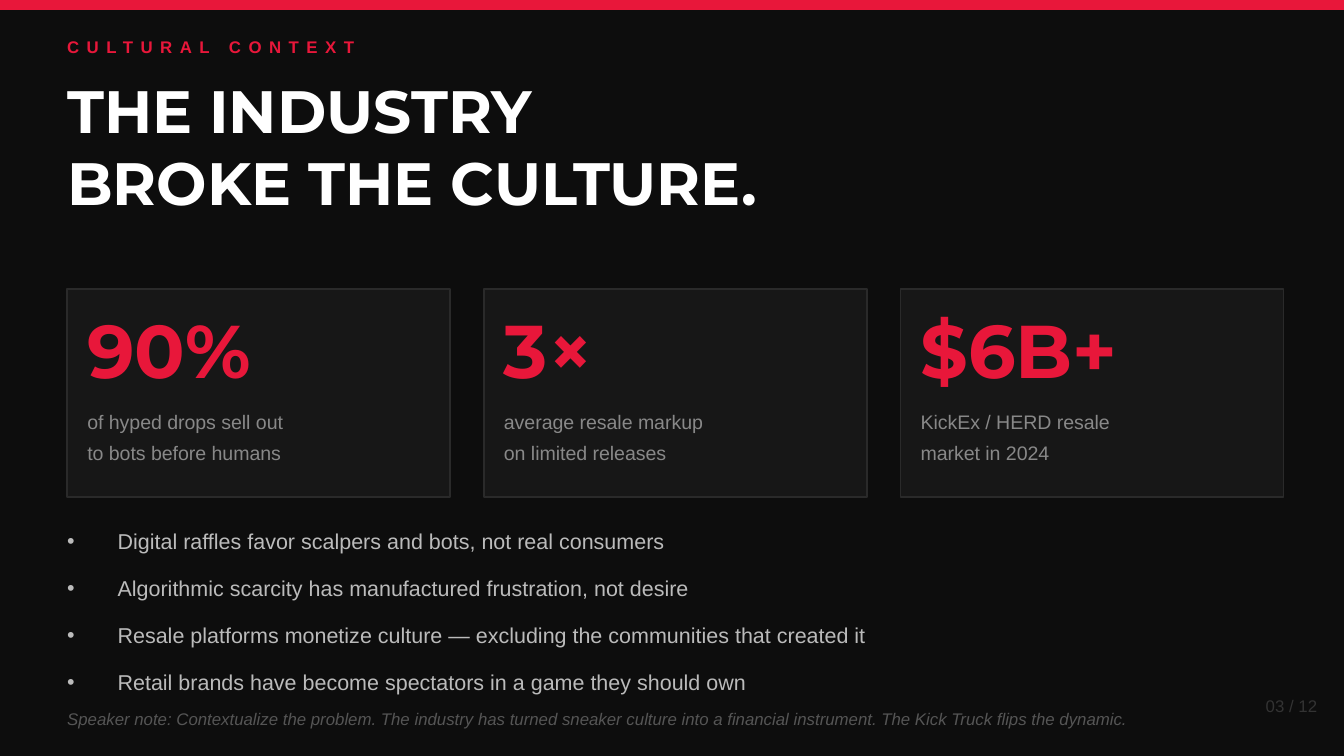
"""Build the cultural context slide with three statistic cards and a bullet list."""
from dataclasses import dataclass

from lxml.etree import SubElement
from pptx import Presentation
from pptx.dml.color import RGBColor
from pptx.enum.shapes import MSO_SHAPE as Shape
from pptx.enum.text import MSO_ANCHOR as Anchor, PP_ALIGN as Align
from pptx.oxml.ns import qn
from pptx.slide import Slide
from pptx.util import Inches, Pt

BACKGROUND = RGBColor(0x0D, 0x0D, 0x0D)
ACCENT = RGBColor(0xE8, 0x17, 0x3A)
WHITE = RGBColor(0xFF, 0xFF, 0xFF)
CARD_FILL = RGBColor(0x17, 0x17, 0x17)
CARD_LINE = RGBColor(0x2A, 0x2A, 0x2A)
CAPTION = RGBColor(0x88, 0x88, 0x88)
BODY = RGBColor(0xBB, 0xBB, 0xBB)
NOTE = RGBColor(0x55, 0x55, 0x55)
PAGE = RGBColor(0x33, 0x33, 0x33)

MARGIN = 0.5
CARD_TOP, CARD_WIDTH, CARD_HEIGHT, CARD_GAP = 2.15, 2.85, 1.55, 0.25
CARD_PADDING = 0.15
BULLET_INDENT = Pt(27)

STATISTICS = [
    ("90%", ["of hyped drops sell out", "to bots before humans"]),
    ("3×", ["average resale markup", "on limited releases"]),
    ("$6B+", ["KickEx / HERD resale", "market in 2024"]),
]
BULLETS = [
    "Digital raffles favor scalpers and bots, not real consumers",
    "Algorithmic scarcity has manufactured frustration, not desire",
    "Resale platforms monetize culture — excluding the communities that created it",
    "Retail brands have become spectators in a game they should own",
]
SPEAKER_NOTE = (
    "Speaker note: Contextualize the problem. The industry has turned sneaker culture "
    "into a financial instrument. The Kick Truck flips the dynamic."
)


def write_paragraph(paragraph, text, *, size, color, font="Arial", bold=False, italic=False,
                    align=Align.LEFT, line_spacing=None, space_after=None,
                    tracking=None, bullet=False):
    if bullet:
        properties = paragraph._p.get_or_add_pPr()
        properties.set("marL", str(BULLET_INDENT))
        properties.set("indent", str(-BULLET_INDENT))
        SubElement(properties, qn("a:buSzPct"), val="100000")
        SubElement(properties, qn("a:buFont"), typeface=font)
        SubElement(properties, qn("a:buChar"), char="•")
    paragraph.alignment = align
    if line_spacing is not None:
        paragraph.line_spacing = line_spacing
    if space_after is not None:
        paragraph.space_after = Pt(space_after)
    run = paragraph.add_run()
    run.text = text
    run.font.name = font
    run.font.size = Pt(size)
    run.font.color.rgb = color
    run.font.bold = bold
    run.font.italic = italic
    if tracking is not None:
        run._r.get_or_add_rPr().set("spc", str(tracking * 100))


@dataclass
class SlideBuilder:
    slide: Slide
    heading_font: str = "Montserrat"

    def background(self, color):
        fill = self.slide.background.fill
        fill.solid()
        fill.fore_color.rgb = color

    def rectangle(self, left, top, width, height, fill, line):
        shape = self.slide.shapes.add_shape(
            Shape.RECTANGLE, Inches(left), Inches(top), Inches(width), Inches(height))
        shape.shadow.inherit = False
        shape.fill.solid()
        shape.fill.fore_color.rgb = fill
        shape.line.color.rgb = line
        shape.line.width = Pt(1)

    def text(self, left, top, width, height, lines, anchor=Anchor.MIDDLE, **style):
        box = self.slide.shapes.add_textbox(
            Inches(left), Inches(top), Inches(width), Inches(height))
        frame = box.text_frame
        frame.word_wrap = True
        frame.vertical_anchor = anchor
        frame.margin_left = frame.margin_right = frame.margin_top = frame.margin_bottom = 0
        for index, line in enumerate(lines):
            paragraph = frame.add_paragraph() if index else frame.paragraphs[0]
            write_paragraph(paragraph, line, **style)

    def heading(self, left, top, width, height, lines, **style):
        self.text(left, top, width, height, lines, font=self.heading_font, bold=True, **style)

    def statistic_card(self, left, value, caption):
        self.rectangle(left, CARD_TOP, CARD_WIDTH, CARD_HEIGHT, CARD_FILL, CARD_LINE)
        text_left = left + CARD_PADDING
        self.heading(text_left, CARD_TOP + 0.07, 2.6, 0.75, [value], size=40, color=ACCENT)
        self.text(text_left, CARD_TOP + 0.75, 2.6, 0.65, caption,
                  size=10.5, color=CAPTION, line_spacing=1.3)


def main():
    presentation = Presentation()
    presentation.slide_width = Inches(10)
    presentation.slide_height = Inches(10 * 9 / 16)
    builder = SlideBuilder(presentation.slides.add_slide(presentation.slide_layouts[6]))

    builder.background(BACKGROUND)
    builder.rectangle(0, 0, 10, 0.07, ACCENT, ACCENT)
    builder.text(MARGIN, 0.2, 9, 0.3, ["CULTURAL CONTEXT"],
                 size=9, color=ACCENT, bold=True, tracking=4)
    builder.heading(MARGIN, 0.55, 5.5, 1.6, ["THE INDUSTRY", "BROKE THE CULTURE."],
                    anchor=Anchor.TOP, size=32, color=WHITE)
    for column, (value, caption) in enumerate(STATISTICS):
        builder.statistic_card(MARGIN + column * (CARD_WIDTH + CARD_GAP), value, caption)
    builder.text(MARGIN, 3.88, 9, 1.1, BULLETS, anchor=Anchor.TOP, size=11.5, color=BODY,
                 line_spacing=1.25, space_after=8, bullet=True)
    builder.text(MARGIN, 5.2, 9, 0.3, [SPEAKER_NOTE], size=9, color=NOTE, italic=True)
    builder.text(8.8, 5.1, 1, 0.3, ["03 / 12"], size=9, color=PAGE, align=Align.RIGHT)

    presentation.save("out.pptx")


if __name__ == "__main__":
    main()
